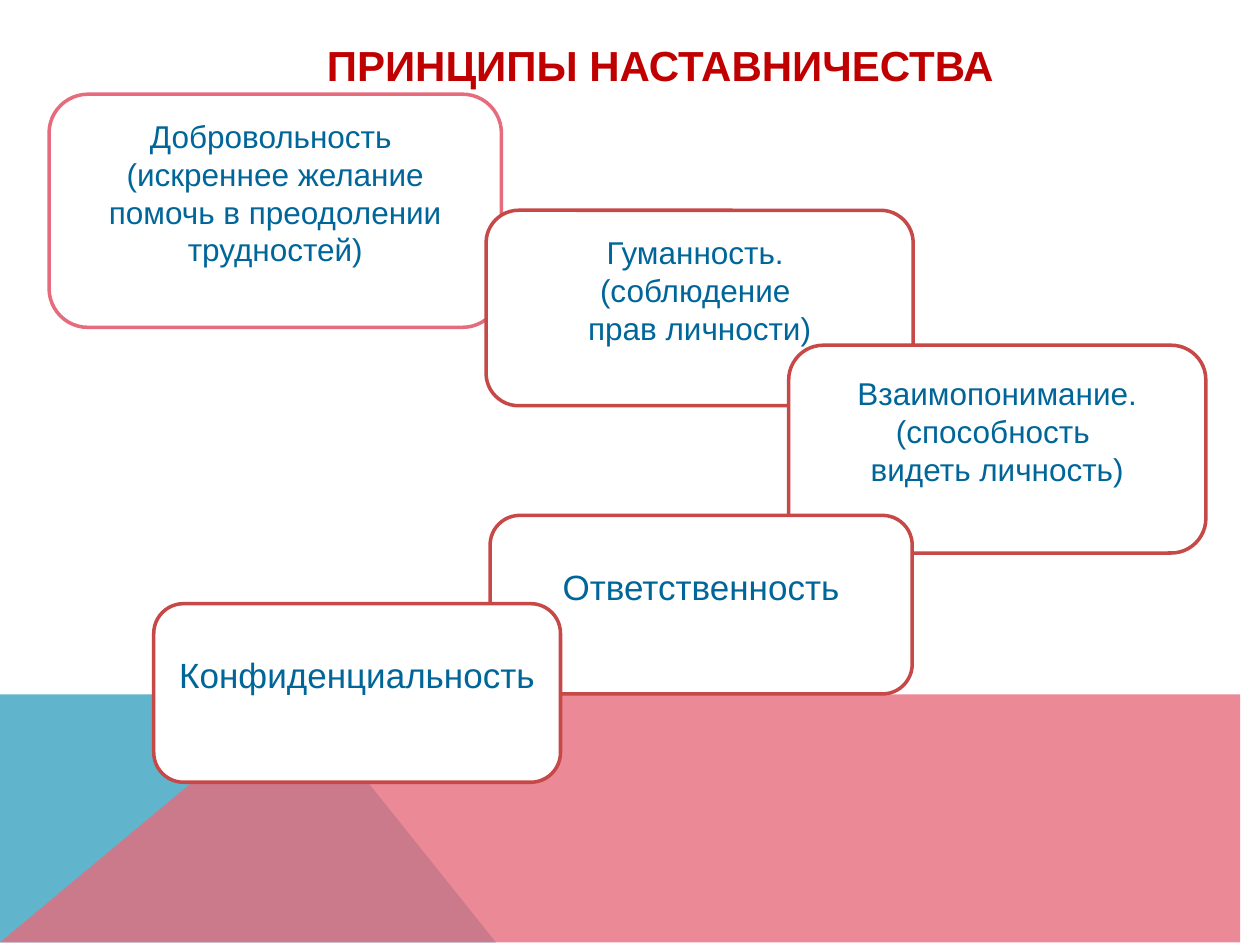
from lxml import etree
from pptx import Presentation, util as u
from pptx.dml import color
from pptx.enum import shapes, text
from pptx.oxml import ns

# Content: lengths in centimetres
WIDTH, HEIGHT = 25.4, 19.05
HORIZON, PEAK, BLUE_END = 14.03, 5.66, 9.93
ROSE, RED = "E66C7D", "C64847"

TITLE = ("ПРИНЦИПЫ НАСТАВНИЧЕСТВА", (3.91, 0.67, 18.8, 2.31))

# Backdrop: corner points, fill, opacity in percent
BACKDROP = [
    ([(0, HEIGHT), (0, HORIZON), (PEAK, HORIZON), (BLUE_END, HEIGHT)], "60B5CC", 100),
    ([(0, HEIGHT), (PEAK, HORIZON), (WIDTH, HORIZON), (WIDTH, HEIGHT)], ROSE, 80),
]

# Principles: lines, (left, top, width, height), outline, text size
PRINCIPLES = [
    (["Добровольность ", "(искреннее желание помочь в преодолении трудностей)"],
     (0.99, 1.9, 9.12, 4.7), ROSE, 18),
    (["Гуманность. ", "(соблюдение ", "прав личности)"],
     (9.8, 4.24, 8.61, 3.94), RED, 18),
    (["Взаимопонимание. (способность ", "видеть личность)"],
     (15.9, 6.96, 8.41, 4.19), RED, 18),
    (["Ответственность"], (9.88, 10.39, 8.51, 3.6), RED, 20),
    (["Конфиденциальность"], (3.1, 12.17, 8.2, 3.6), RED, 20),
]

TITLE_FONT = {"name": "Arial", "size": u.Pt(24), "bold": True}
BOX_FRAME = {"word_wrap": True, "vertical_anchor": text.MSO_ANCHOR.MIDDLE,
             "margin_bottom": u.Cm(0.86)}
TITLE_FRAME = {"word_wrap": True, "vertical_anchor": text.MSO_ANCHOR.TOP}


def rgb(value):
    return color.RGBColor.from_string(value)


def apply(target, values):
    for name, value in values.items():
        setattr(target, name, value)


def paint(shape, fill, outline=None):
    shape.shadow.inherit = False
    shape.fill.solid()
    shape.fill.fore_color.rgb = rgb(fill)
    if outline:
        shape.line.color.rgb = rgb(outline)
        shape.line.width = u.Pt(2)
    else:
        shape.line.fill.background()


def write(shape, lines, frame_format, font_format, ink):
    frame = shape.text_frame
    apply(frame, frame_format)
    for index, line in enumerate(lines):
        paragraph = frame.add_paragraph() if index else frame.paragraphs[0]
        paragraph.alignment = text.PP_ALIGN.CENTER
        run = paragraph.add_run()
        run.text = line
        apply(run.font, font_format)
        run.font.color.rgb = rgb(ink)


def add_backdrop(slide, points, fill, opacity):
    builder = slide.shapes.build_freeform(*points[0], scale=float(u.Cm(1)))
    builder.add_line_segments(points[1:], close=True)
    shape = builder.convert_to_shape()
    paint(shape, fill)
    if opacity < 100:
        tone = shape.fill._xPr.find(".//" + ns.qn("a:srgbClr"))
        etree.SubElement(tone, ns.qn("a:alpha"), val=str(opacity * 1000))


def main():
    presentation = Presentation()
    presentation.slide_width, presentation.slide_height = u.Cm(WIDTH), u.Cm(HEIGHT)
    slide = presentation.slides.add_slide(presentation.slide_layouts[6])

    # Backdrop
    for points, fill, opacity in BACKDROP:
        add_backdrop(slide, points, fill, opacity)

    # Title
    heading, place = TITLE
    title = slide.shapes.add_textbox(*map(u.Cm, place))
    write(title, [heading], TITLE_FRAME, TITLE_FONT, "C00000")

    # Overlapping principle boxes
    for lines, place, outline, size in PRINCIPLES:
        box = slide.shapes.add_shape(
            shapes.MSO_SHAPE.FLOWCHART_ALTERNATE_PROCESS, *map(u.Cm, place))
        paint(box, "FFFFFF", outline)
        write(box, lines, BOX_FRAME, {"name": "Arial", "size": u.Pt(size)}, "006699")

    presentation.save("out.pptx")


if __name__ == "__main__":
    main()
